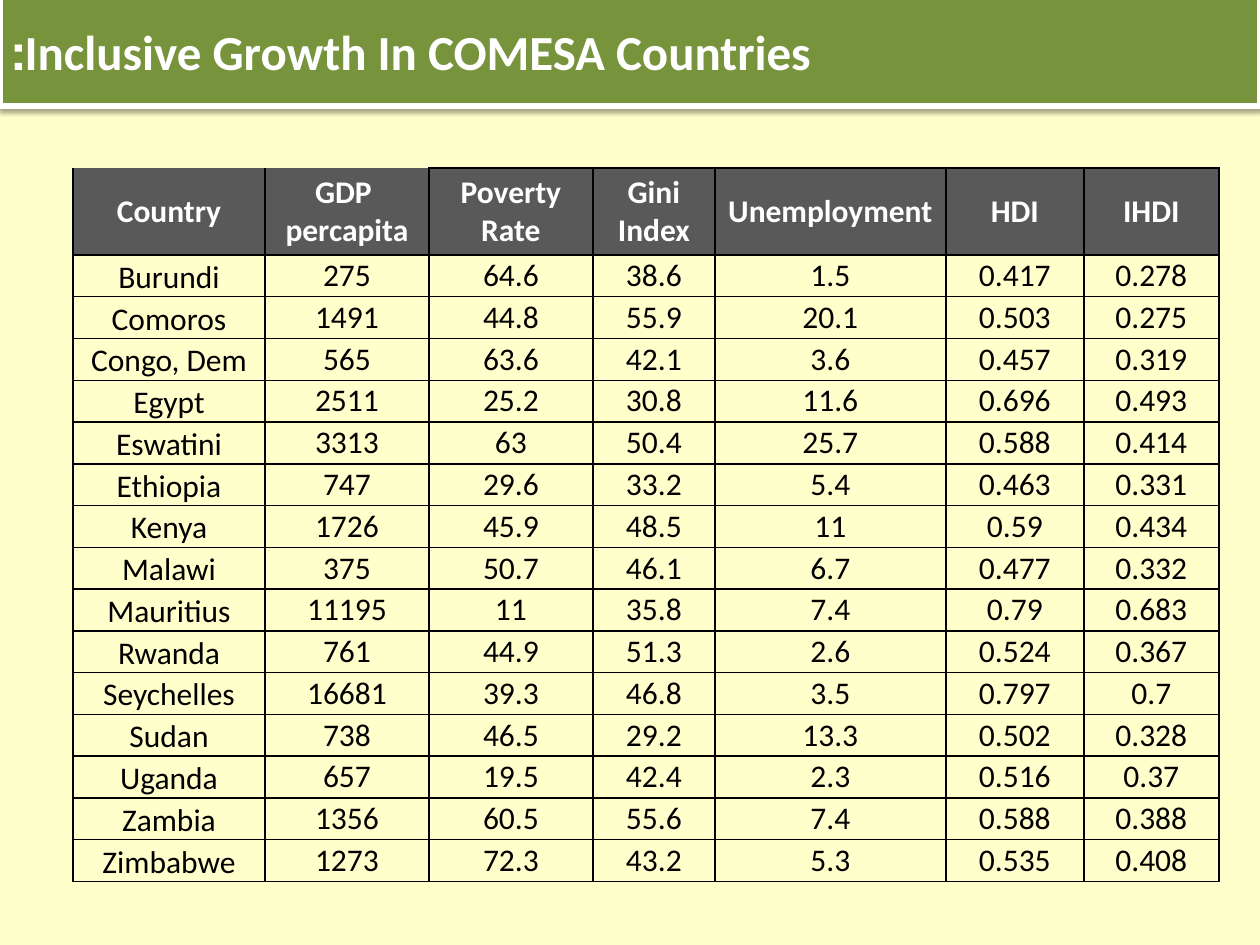
from dataclasses import dataclass

from lxml import etree
from pptx import Presentation
from pptx import util as u
from pptx.dml.color import RGBColor
from pptx.enum import shapes, text
from pptx.oxml.ns import qn

PX = u.Inches(1) // 126


@dataclass(frozen=True)
class Theme:
    font: str = "Calibri"
    page: str = "FFFFCC"
    band: str = "77933C"
    head: str = "595959"
    light: str = "FFFFFF"
    dark: str = "000000"
    title: int = 28
    body: int = 18


THEME = Theme()
TITLE = "Inclusive Growth In COMESA Countries:"
WIDTHS = [192, 164, 164, 122, 231, 138, 135]
HEAD_H, BODY_H = 87, 627
GINI = 3
HEADS = ["Country", "GDP \npercapita", "Poverty Rate", "Gini Index",
         "Unemployment", "HDI", "IHDI"]
ROWS = [
    ["Burundi", "275", "64.6", "38.6", "1.5", "0.417", "0.278"],
    ["Comoros", "1491", "44.8", "55.9", "20.1", "0.503", "0.275"],
    ["Congo, Dem", "565", "63.6", "42.1", "3.6", "0.457", "0.319"],
    ["Egypt", "2511", "25.2", "30.8", "11.6", "0.696", "0.493"],
    ["Eswatini", "3313", "63", "50.4", "25.7", "0.588", "0.414"],
    ["Ethiopia", "747", "29.6", "33.2", "5.4", "0.463", "0.331"],
    ["Kenya", "1726", "45.9", "48.5", "11", "0.59", "0.434"],
    ["Malawi", "375", "50.7", "46.1", "6.7", "0.477", "0.332"],
    ["Mauritius", "11195", "11", "35.8", "7.4", "0.79", "0.683"],
    ["Rwanda", "761", "44.9", "51.3", "2.6", "0.524", "0.367"],
    ["Seychelles", "16681", "39.3", "46.8", "3.5", "0.797", "0.7"],
    ["Sudan", "738", "46.5", "29.2", "13.3", "0.502", "0.328"],
    ["Uganda", "657", "19.5", "42.4", "2.3", "0.516", "0.37"],
    ["Zambia", "1356", "60.5", "55.6", "7.4", "0.588", "0.388"],
    ["Zimbabwe", "1273", "72.3", "43.2", "5.3", "0.535", "0.408"],
]


def rgb(color):
    return RGBColor.from_string(color)


def paint(fill, color):
    fill.solid()
    fill.fore_color.rgb = rgb(color)


def style(frame, size, color, bold, align):
    for para in frame.paragraphs:
        para.alignment = align
        for run in para.runs:
            font = run.font
            font.name, font.size, font.bold = THEME.font, u.Pt(size), bold
            font.color.rgb = rgb(color)


def child(parent, tag, **attrs):
    return etree.SubElement(parent, qn(tag), {k: str(v) for k, v in attrs.items()})


def shade(shape):
    """Give the shape a soft shadow straight below it."""
    shape.shadow.inherit = False
    effects = shape.element.spPr.find(qn("a:effectLst"))
    outer = child(effects, "a:outerShdw", blurRad=u.Pt(3.1), dist=u.Pt(1.6),
                  dir=90 * 60000, rotWithShape=0)
    color = child(outer, "a:srgbClr", val=THEME.dark)
    child(color, "a:alpha", val=38000)


def add_title(slide):
    bar = slide.shapes.add_shape(shapes.MSO_SHAPE.RECTANGLE,
                                 0, -4 * PX, 1260 * PX, 110 * PX)
    paint(bar.fill, THEME.band)
    bar.line.color.rgb = rgb(THEME.light)
    bar.line.width = u.Pt(3)
    shade(bar)
    frame = bar.text_frame
    frame.text = TITLE
    frame.word_wrap = True
    frame.vertical_anchor = text.MSO_ANCHOR.MIDDLE
    style(frame, THEME.title, THEME.light, True, text.PP_ALIGN.LEFT)
    frame.paragraphs[0]._p.get_or_add_pPr().set("rtl", "1")


def edge(cell, bare):
    """Draw the cell's four borders, leaving out those named in bare."""
    props = cell._tc.get_or_add_tcPr()
    for side in "LRTB":
        line = child(props, f"a:ln{side}", w=u.Pt(1))
        if side in bare:
            child(line, "a:noFill")
        else:
            child(child(line, "a:solidFill"), "a:srgbClr", val=THEME.dark)


def set_cell(cell, value, row, col):
    head = row == 0
    cell.text = value
    cell.margin_left = cell.margin_right = 0
    cell.margin_top = cell.margin_bottom = 0
    name = col == 0 and not head
    cell.vertical_anchor = text.MSO_ANCHOR.BOTTOM if name else text.MSO_ANCHOR.MIDDLE
    style(cell.text_frame, THEME.body, THEME.light if head else THEME.dark,
          head, text.PP_ALIGN.CENTER)
    edge(cell, "T" if head and col < 2 else "")
    if head:
        paint(cell.fill, THEME.head)
    elif col == GINI:
        paint(cell.fill, THEME.page)
    else:
        cell.fill.background()


def add_grid(slide):
    data = [HEADS] + ROWS
    grid = slide.shapes.add_table(len(data), len(HEADS), 73 * PX, 168 * PX,
                                  sum(WIDTHS) * PX, (HEAD_H + BODY_H) * PX).table
    grid.first_row = grid.horz_banding = False
    for col, width in zip(grid.columns, WIDTHS):
        col.width = width * PX
    for i, values in enumerate(data):
        grid.rows[i].height = BODY_H * PX // len(ROWS) if i else HEAD_H * PX
        for j, value in enumerate(values):
            set_cell(grid.cell(i, j), value, i, j)


def main():
    deck = Presentation()
    deck.slide_width, deck.slide_height = 1260 * PX, 945 * PX
    slide = deck.slides.add_slide(deck.slide_layouts[6])
    paint(slide.background.fill, THEME.page)
    add_title(slide)
    add_grid(slide)
    deck.save("out.pptx")


if __name__ == "__main__":
    main()
